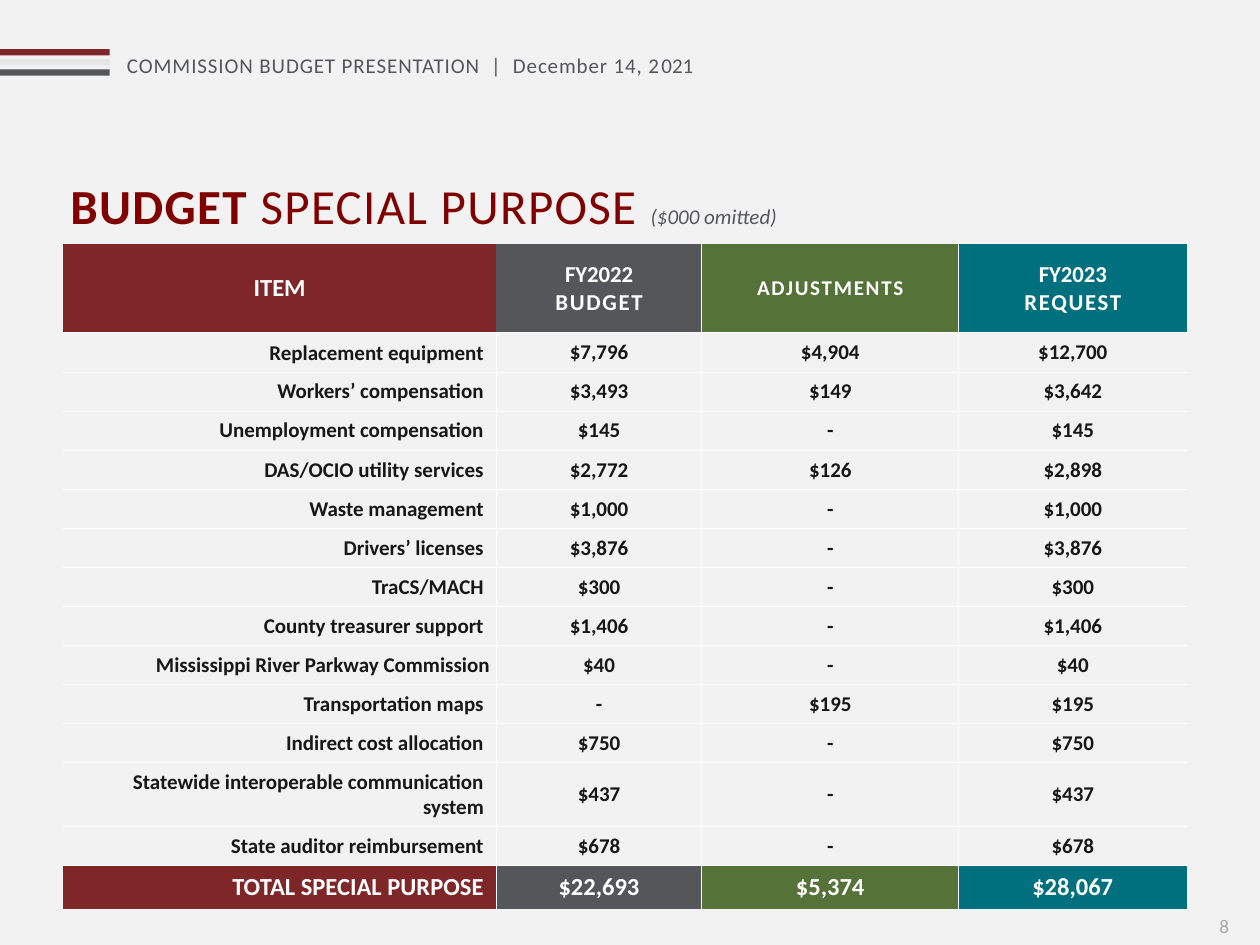
from lxml import etree
from pptx import Presentation, util as u
from pptx.dml.color import RGBColor
from pptx.enum import shapes, text
from pptx.oxml.ns import qn

WIDTH, HEIGHT = 10, 7.5
FONT = "Calibri"
COLORS = {
    "background": "F2F2F2", "white": "FFFFFF", "ink": "181717",
    "maroon": "7F2629", "title": "800000", "gray": "54565A",
    "running": "55565A", "silver": "E7E6E6", "green": "557238",
    "teal": "00707F", "page": "A7A8A9",
}
COLUMN_FILLS = ["maroon", "gray", "green", "teal"]
COLUMN_WIDTHS = [3.44, 1.63, 2.04, 1.81]
HEADER_HEIGHT, ITEM_HEIGHT, TALL_HEIGHT, TOTAL_HEIGHT = 0.7, 0.31, 0.51, 0.34

# Each heading line: text, size, letter spacing
HEADINGS = [
    [("ITEM", 14, 0)],
    [("FY2022", 13, 0), ("BUDGET", 13, 1)],
    [("ADJUSTMENTS", 12, 1)],
    [("FY2023", 13, 0), ("REQUEST", 13, 1)],
]
ITEMS = [
    ("Replacement equipment", "$7,796", "$4,904", "$12,700"),
    ("Workers’ compensation", "$3,493", "$149", "$3,642"),
    ("Unemployment compensation", "$145", "-", "$145"),
    ("DAS/OCIO utility services", "$2,772", "$126", "$2,898"),
    ("Waste management", "$1,000", "-", "$1,000"),
    ("Drivers’ licenses", "$3,876", "-", "$3,876"),
    ("TraCS/MACH", "$300", "-", "$300"),
    ("County treasurer support", "$1,406", "-", "$1,406"),
    ("Mississippi River Parkway Commission", "$40", "-", "$40"),
    ("Transportation maps", "-", "$195", "$195"),
    ("Indirect cost allocation", "$750", "-", "$750"),
    ("Statewide interoperable communication system", "$437", "-", "$437"),
    ("State auditor reimbursement", "$678", "-", "$678"),
]
TOTALS = ("TOTAL SPECIAL PURPOSE", "$22,693", "$5,374", "$28,067")


def rgb(name):
    return RGBColor.from_string(COLORS[name])


def style_run(run, size, color, bold=False, italic=False, spacing=0):
    font = run.font
    font.name, font.size = FONT, u.Pt(size)
    font.bold, font.italic = bold, italic
    font.color.rgb = rgb(color)
    if spacing:
        run._r.get_or_add_rPr().set("spc", str(round(spacing * 100)))


def add_line(slide, left, top, width, height, pieces):
    """One line of text made of (wording, style) pieces."""
    box = slide.shapes.add_textbox(*map(u.Inches, (left, top, width, height)))
    box.text_frame.word_wrap = True
    for wording, style in pieces:
        run = box.text_frame.paragraphs[0].add_run()
        run.text = wording
        style_run(run, **style)


def add_stripes(slide):
    for row, color in enumerate(["maroon", "silver", "gray"]):
        stripe = slide.shapes.add_shape(
            shapes.MSO_SHAPE.RECTANGLE, 0, u.Inches(0.39 + 0.08 * row),
            u.Inches(0.87), u.Inches(0.05))
        stripe.shadow.inherit = False
        stripe.fill.solid()
        stripe.fill.fore_color.rgb = rgb(color)
        stripe.line.fill.background()


def set_borders(cell, visible):
    """White rules on the visible sides, none on the others."""
    properties = cell._tc.get_or_add_tcPr()
    for side in "LRTB":
        rule = etree.SubElement(properties, qn(f"a:ln{side}"), w=str(u.Pt(0.75)))
        if side in visible:
            fill = etree.SubElement(rule, qn("a:solidFill"))
            etree.SubElement(fill, qn("a:srgbClr"), val=COLORS["white"])
        else:
            etree.SubElement(rule, qn("a:noFill"))


def fill_cell(cell, lines, align, color, fill=None, borders="LRTB"):
    set_borders(cell, borders)
    if fill:
        cell.fill.solid()
        cell.fill.fore_color.rgb = rgb(fill)
    else:
        cell.fill.background()
    cell.vertical_anchor = text.MSO_ANCHOR.MIDDLE
    cell.text_frame.text = "\n".join(wording for wording, _, _ in lines)
    for paragraph, (_, size, spacing) in zip(cell.text_frame.paragraphs, lines):
        paragraph.alignment = align
        style_run(paragraph.runs[0], size, color, bold=True, spacing=spacing)


def narrow_margins(cell):
    cell.margin_left = cell.margin_right = u.Inches(0.05)


def add_budget_table(slide):
    heights = [HEADER_HEIGHT]
    heights += [TALL_HEIGHT if item[0].startswith("Statewide") else ITEM_HEIGHT
                for item in ITEMS]
    heights.append(TOTAL_HEIGHT)
    budget = slide.shapes.add_table(
        len(heights), len(COLUMN_WIDTHS), u.Inches(0.5), u.Inches(1.94),
        u.Inches(sum(COLUMN_WIDTHS)), u.Inches(sum(heights))).table
    budget.first_row = budget.horz_banding = False
    for column, width in zip(budget.columns, COLUMN_WIDTHS):
        column.width = u.Inches(width)
    for row, height in zip(budget.rows, heights):
        row.height = u.Inches(height)

    center, right = text.PP_ALIGN.CENTER, text.PP_ALIGN.RIGHT
    side_rules = ["R", "LR", "LR", "L"]

    # Headings: no rule between the first two
    for col, lines in enumerate(HEADINGS):
        cell = budget.cell(0, col)
        fill_cell(cell, lines, center, "white", COLUMN_FILLS[col],
                  ["B", "RB", "LRB", "LB"][col])
        narrow_margins(cell)

    # Items, then totals
    for row, values in enumerate([*ITEMS, TOTALS], start=1):
        is_total = values is TOTALS
        for col, value in enumerate(values):
            fill_cell(budget.cell(row, col), [(value, 14 if is_total else 12, 0)],
                      center if col else right,
                      "white" if is_total else "ink",
                      COLUMN_FILLS[col] if is_total else None,
                      side_rules[col] + ("T" if is_total else "TB"))
        if values[0].startswith("Mississippi"):
            narrow_margins(budget.cell(row, 0))

    first_item = budget.cell(1, 0).text_frame.paragraphs[0]
    first_item.line_spacing = 1.07
    first_item.space_after = u.Pt(8)


def main():
    deck = Presentation()
    deck.slide_width, deck.slide_height = u.Inches(WIDTH), u.Inches(HEIGHT)
    slide = deck.slides.add_slide(deck.slide_layouts[6])
    slide.background.fill.solid()
    slide.background.fill.fore_color.rgb = rgb("background")

    # Running header
    running = dict(size=12, color="running")
    add_line(slide, 0.91, 0.37, 4.84, 0.5, [
        ("COMMISSION BUDGET PRESENTATION  |  December 14, 2", running | {"spacing": 0.5}),
        ("021", running)])
    add_stripes(slide)

    # Title
    title = dict(size=28, color="title", spacing=0.8)
    add_line(slide, 0.46, 1.34, 8.95, 0.57, [
        ("BUDGET ", title | {"bold": True}),
        ("SPECIAL PURPOSE ", title),
        ("($000 omitted)", dict(size=12, color="gray", italic=True))])

    # Page number
    add_line(slide, 9.58, 7.21, WIDTH - 9.58, HEIGHT - 7.21,
             [("8", dict(size=11, color="page"))])

    add_budget_table(slide)
    deck.save("out.pptx")


if __name__ == "__main__":
    main()
